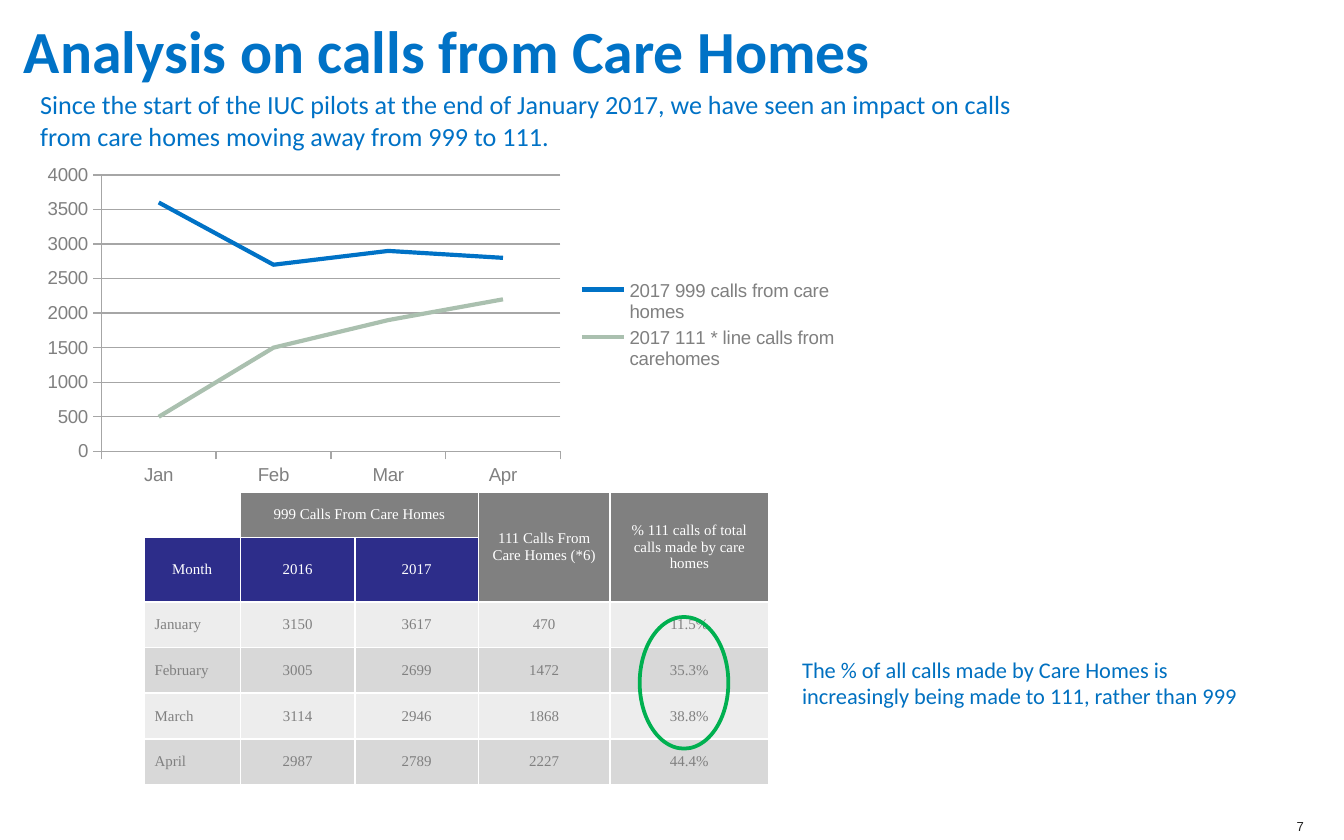
from lxml.etree import SubElement
from pptx import Presentation
from pptx.chart.data import CategoryChartData
from pptx.dml.color import RGBColor
from pptx.enum.chart import XL_CHART_TYPE, XL_LEGEND_POSITION, XL_TICK_MARK
from pptx.enum.shapes import MSO_SHAPE
from pptx.enum.text import MSO_ANCHOR, PP_ALIGN
from pptx.oxml import parse_xml
from pptx.oxml.ns import nsdecls, qn
from pptx.util import Inches, Pt

COLORS = {
    "blue": "0072C6", "note": "0070C0", "sage": "AAC0AF", "green": "00B050",
    "navy": "2D2D8A", "gray": "808080", "grid": "A6A6A6", "white": "FFFFFF",
    "light": "EDEDED", "mid": "D8D8D8", "dark": "202020",
}
CALLS = [
    ("January", 3150, 3617, 470, "11.5%"),
    ("February", 3005, 2699, 1472, "35.3%"),
    ("March", 3114, 2946, 1868, "38.8%"),
    ("April", 2987, 2789, 2227, "44.4%"),
]
COLUMN_WIDTHS = [0.72, 0.85, 0.92, 0.98, 1.18]
ROW_HEIGHTS = [0.34, 0.22] + [0.34] * len(CALLS)


def rgb(name):
    return RGBColor.from_string(COLORS[name])


def add_run(p, text, size, color, font="Calibri", bold=False):
    r = p.add_run()
    r.text = text
    r.font.name = font
    r.font.size = Pt(size)
    r.font.bold = bold
    r.font.color.rgb = rgb(color)


def add_text(s, box, text, size, color, font="Calibri", bold=False,
             align=PP_ALIGN.LEFT, anchor=MSO_ANCHOR.TOP, indent=0):
    tf = s.shapes.add_textbox(*map(Inches, box)).text_frame
    tf.word_wrap = True
    tf.vertical_anchor = anchor
    p = tf.paragraphs[0]
    p.alignment = align
    if indent:
        p._p.get_or_add_pPr().set("marL", str(Inches(indent)))
    add_run(p, text, size, color, font, bold)


def set_borders(cell):
    tcPr = cell._tc.get_or_add_tcPr()
    for i, side in enumerate("LRTB"):
        tcPr.insert(i, parse_xml(
            f'<a:ln{side} {nsdecls("a")} w="{Pt(1)}"><a:solidFill>'
            f'<a:srgbClr val="{COLORS["white"]}"/></a:solidFill></a:ln{side}>'))


def fill_cell(cell, text, fill, color="white", align=PP_ALIGN.CENTER):
    cell.fill.solid()
    cell.fill.fore_color.rgb = rgb(fill)
    cell.vertical_anchor = MSO_ANCHOR.MIDDLE
    cell.margin_left = cell.margin_right = Inches(0.08)
    cell.margin_top = cell.margin_bottom = Inches(0.04)
    set_borders(cell)
    p = cell.text_frame.paragraphs[0]
    p.alignment = align
    if text:
        add_run(p, text, 8, color, "Times New Roman")
    else:
        SubElement(p._p, qn("a:endParaRPr")).set("sz", "800")


def add_calls_table(s):
    table = s.shapes.add_table(
        len(ROW_HEIGHTS), len(COLUMN_WIDTHS), Inches(1.07), Inches(3.66),
        Inches(sum(COLUMN_WIDTHS)), Inches(sum(ROW_HEIGHTS))).table
    for column, width in zip(table.columns, COLUMN_WIDTHS):
        column.width = Inches(width)
    for row, height in zip(table.rows, ROW_HEIGHTS):
        row.height = Inches(height)
    headings = ["", "999 Calls From Care Homes", "", "111 Calls From Care Homes (*6)",
                "% 111 calls of total calls made by care homes"]
    for c, heading in enumerate(headings):
        fill_cell(table.cell(0, c), heading, "gray" if c else "white")
    for c, heading in enumerate(["Month", "2016", "2017", "", ""]):
        fill_cell(table.cell(1, c), heading, "navy" if heading else "gray")
    table.cell(0, 1).merge(table.cell(0, 2))
    for c in (3, 4):
        table.cell(0, c).merge(table.cell(1, c))
    for i, values in enumerate(CALLS):
        for c, value in enumerate(values):
            fill_cell(table.cell(i + 2, c), str(value), "mid" if i % 2 else "light",
                      "gray", PP_ALIGN.CENTER if c else PP_ALIGN.LEFT)


def manual_layout(x, y, w, h, inner=False):
    target = '<c:layoutTarget val="inner"/>' if inner else ""
    sizes = "".join(f'<c:{k} val="{v}"/>' for k, v in zip("xywh", (x, y, w, h)))
    return parse_xml(
        f'<c:layout {nsdecls("c")}><c:manualLayout>{target}<c:xMode val="edge"/>'
        f'<c:yMode val="edge"/>{sizes}</c:manualLayout></c:layout>')


def place(element, layout, index):
    for old in element.findall(qn("c:layout")):
        element.remove(old)
    element.insert(index, layout)


def add_calls_chart(s):
    data = CategoryChartData()
    data.categories = [row[0][:3] for row in CALLS]
    for name, column in (("2017 999 calls from care homes", 2),
                         ("2017 111 * line calls from carehomes", 3)):
        data.add_series(name, [round(row[column], -2) for row in CALLS])
    chart = s.shapes.add_chart(
        XL_CHART_TYPE.LINE, Inches(0.23), Inches(1.17), Inches(6.1), Inches(2.48),
        data).chart
    chart.has_title = False
    chart.font.name = "Arial"
    chart.font.size = Pt(10)
    chart.font.color.rgb = rgb("gray")
    chart.has_legend = True
    chart.legend.position = XL_LEGEND_POSITION.RIGHT
    chart.legend.include_in_layout = False
    plot = chart.plots[0]
    plot.vary_by_categories = False
    for series, color in zip(plot.series, ("blue", "sage")):
        series.smooth = False
        series.format.line.width = Pt(2.25)
        series.format.line.color.rgb = rgb(color)
    axis = chart.value_axis
    axis.minimum_scale, axis.maximum_scale, axis.major_unit = 0, 4000, 500
    axis.has_major_gridlines = True
    chart.category_axis.major_tick_mark = axis.major_tick_mark = XL_TICK_MARK.OUTSIDE
    for part in (axis, axis.major_gridlines, chart.category_axis):
        part.format.line.width = Pt(0.75)
        part.format.line.color.rgb = rgb("grid")
    plot_area = chart.element.find(".//" + qn("c:plotArea"))
    place(plot_area, manual_layout(0.086, 0.053, 0.56, 0.83, True), 0)
    place(chart.legend._element, manual_layout(0.661, 0.353, 0.33, 0.3), 1)


def add_highlight(s):
    sp = s.shapes.add_shape(MSO_SHAPE.OVAL, Inches(4.76), Inches(4.59),
                            Inches(0.66), Inches(0.98))
    sp.shadow.inherit = False
    sp.fill.background()
    sp.line.color.rgb = rgb("green")
    sp.line.width = Pt(2)


def main():
    prs = Presentation()
    prs.slide_width, prs.slide_height = Inches(10), Inches(6.25)
    s = prs.slides.add_slide(prs.slide_layouts[6])
    add_text(s, (0.04, 0.61, 7.88, 0.59),
             "Since the start of the IUC pilots at the end of January 2017, we have seen "
             "an impact on calls from care homes moving away from 999 to 111.",
             14, "blue", indent=0.16)
    add_text(s, (9.33, 6.04, 0.47, 0.21), "7", 7, "dark", "Arial",
             align=PP_ALIGN.RIGHT, anchor=MSO_ANCHOR.MIDDLE)
    add_calls_table(s)
    add_calls_chart(s)
    add_highlight(s)
    add_text(s, (5.87, 4.83, 3.46, 0.5),
             "The % of all calls made by Care Homes is increasingly being made to 111, "
             "rather than 999", 12, "note")
    add_text(s, (0.08, 0.05, 8.01, 0.64), "Analysis on calls from Care Homes",
             32, "blue", bold=True)
    prs.save("out.pptx")


if __name__ == "__main__":
    main()
